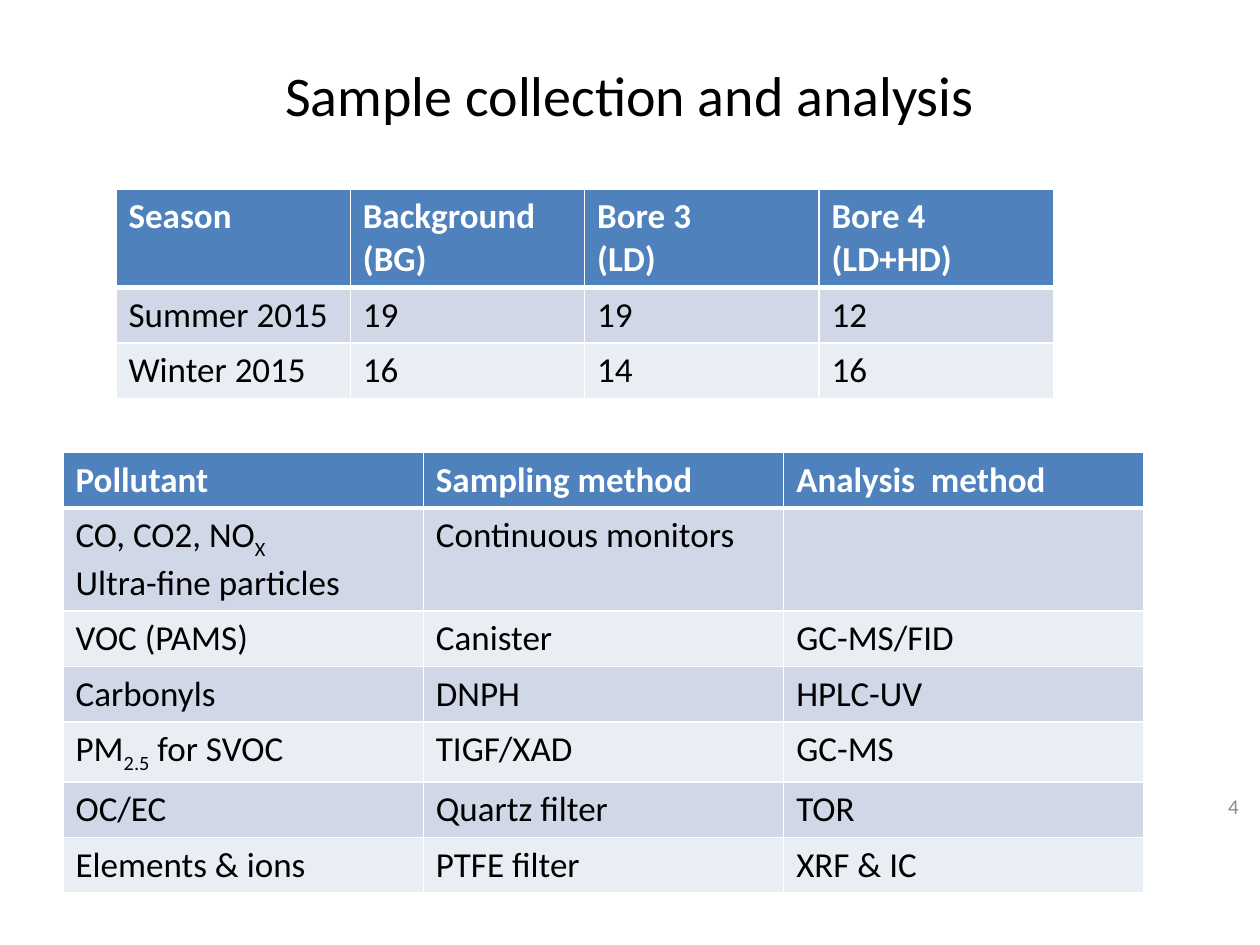
from lxml.etree import SubElement
from pptx import Presentation
from pptx.dml.color import RGBColor
from pptx.enum.text import MSO_ANCHOR, PP_ALIGN
from pptx.oxml.ns import qn
from pptx.util import Inches, Pt

FONT = "Calibri"
BLACK = RGBColor(0x00, 0x00, 0x00)
WHITE = RGBColor(0xFF, 0xFF, 0xFF)
GREY = RGBColor(0x8C, 0x8C, 0x8C)
HEADER_BLUE = RGBColor(0x4F, 0x81, 0xBD)
BAND_DARK = RGBColor(0xD0, 0xD8, 0xE8)
BAND_LIGHT = RGBColor(0xE9, 0xED, 0xF4)
SUBSCRIPT_MARK = "|"

SAMPLES = [
    ["Season", "Background (BG)", "Bore 3\n(LD)", "Bore 4 (LD+HD)"],
    ["Summer 2015", "19", "19", "12"],
    ["Winter 2015", "16", "14", "16"],
]
METHODS = [
    ["Pollutant", "Sampling method", "Analysis  method"],
    ["CO, CO2, NO|X|\nUltra-fine particles", "Continuous monitors", ""],
    ["VOC (PAMS)", "Canister", "GC-MS/FID"],
    ["Carbonyls", "DNPH", "HPLC-UV"],
    ["PM|2.5| for SVOC", "TIGF/XAD", "GC-MS"],
    ["OC/EC", "Quartz filter", "TOR"],
    ["Elements & ions", "PTFE filter", "XRF & IC"],
]


def add_run(paragraph, words, size, color, bold=False):
    run = paragraph.add_run()
    run.text = words
    run.font.name = FONT
    run.font.size = Pt(size)
    run.font.bold = bold
    run.font.color.rgb = color
    return run


def write_cell(frame, content, color, bold):
    for line_index, line in enumerate(content.split("\n")):
        paragraph = frame.add_paragraph() if line_index else frame.paragraphs[0]
        for part_index, part in enumerate(line.split(SUBSCRIPT_MARK)):
            if part:
                run = add_run(paragraph, part, 20, color, bold)
                if part_index % 2:
                    run.font._element.set("baseline", "-25000")


def set_borders(cell, top, bottom):
    properties = cell._tc.get_or_add_tcPr()
    for side, width in (("L", 1), ("R", 1), ("T", top), ("B", bottom)):
        line = SubElement(properties, qn(f"a:ln{side}"), w=str(Pt(width)))
        fill = SubElement(line, qn("a:solidFill"))
        SubElement(fill, qn("a:srgbClr"), val=str(WHITE))


def add_banded_table(slide, rows, left, top, width, height):
    table = slide.shapes.add_table(
        len(rows), len(rows[0]), left, top, width, height
    ).table
    for row_index, row in enumerate(rows):
        table.rows[row_index].height = Inches(0.41)
        is_header = row_index == 0
        band = BAND_DARK if row_index % 2 else BAND_LIGHT
        for column_index, content in enumerate(row):
            cell = table.cell(row_index, column_index)
            set_borders(cell, 3 if row_index == 1 else 1, 3 if is_header else 1)
            cell.fill.solid()
            cell.fill.fore_color.rgb = HEADER_BLUE if is_header else band
            write_cell(cell.text_frame, content, WHITE if is_header else BLACK, is_header)


def place_title(slide, left, top, width, height):
    title = slide.shapes.title
    title.left, title.top, title.width, title.height = left, top, width, height
    title.text_frame.vertical_anchor = MSO_ANCHOR.MIDDLE
    heading = title.text_frame.paragraphs[0]
    heading.alignment = PP_ALIGN.CENTER
    add_run(heading, "Sample collection and analysis", 32, BLACK)


def add_page_number(slide, left, top, width, height):
    frame = slide.shapes.add_textbox(left, top, width, height).text_frame
    frame.word_wrap = True
    frame.vertical_anchor = MSO_ANCHOR.MIDDLE
    number = frame.paragraphs[0]
    number.alignment = PP_ALIGN.RIGHT
    add_run(number, "4", 12, GREY)


def main():
    deck = Presentation()
    deck.slide_width, deck.slide_height = Inches(10), Inches(7.5)
    slide = deck.slides.add_slide(deck.slide_layouts[5])
    place_title(slide, Inches(0.5), Inches(0.3), Inches(9), Inches(0.9))
    add_banded_table(slide, METHODS, Inches(0.5), Inches(3.59), Inches(8.58), Inches(2.87))
    add_banded_table(slide, SAMPLES, Inches(0.92), Inches(1.5), Inches(7.44), Inches(1.23))
    add_page_number(slide, Inches(9.33), Inches(6.18), Inches(0.6), Inches(0.43))
    deck.save("out.pptx")


if __name__ == "__main__":
    main()
